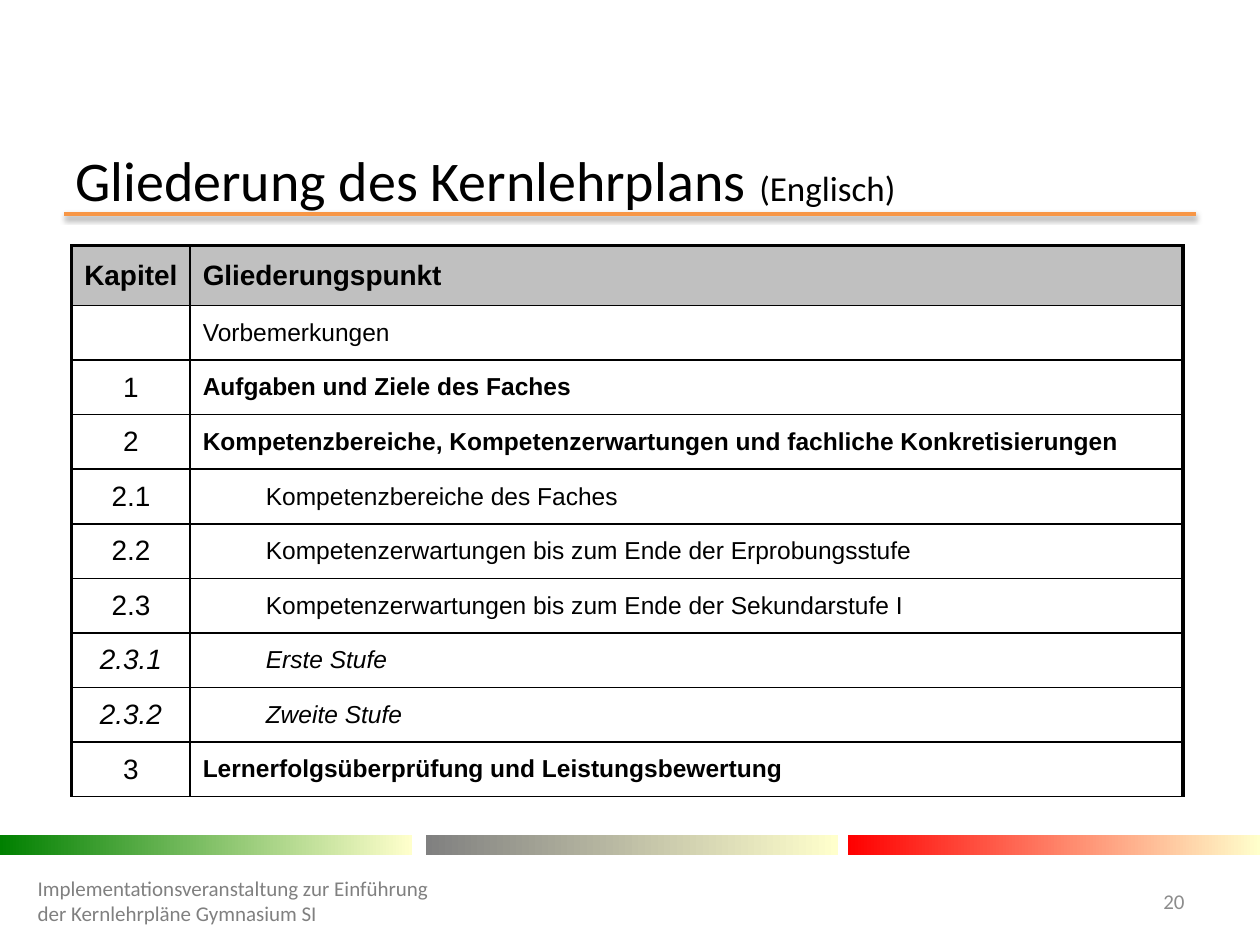
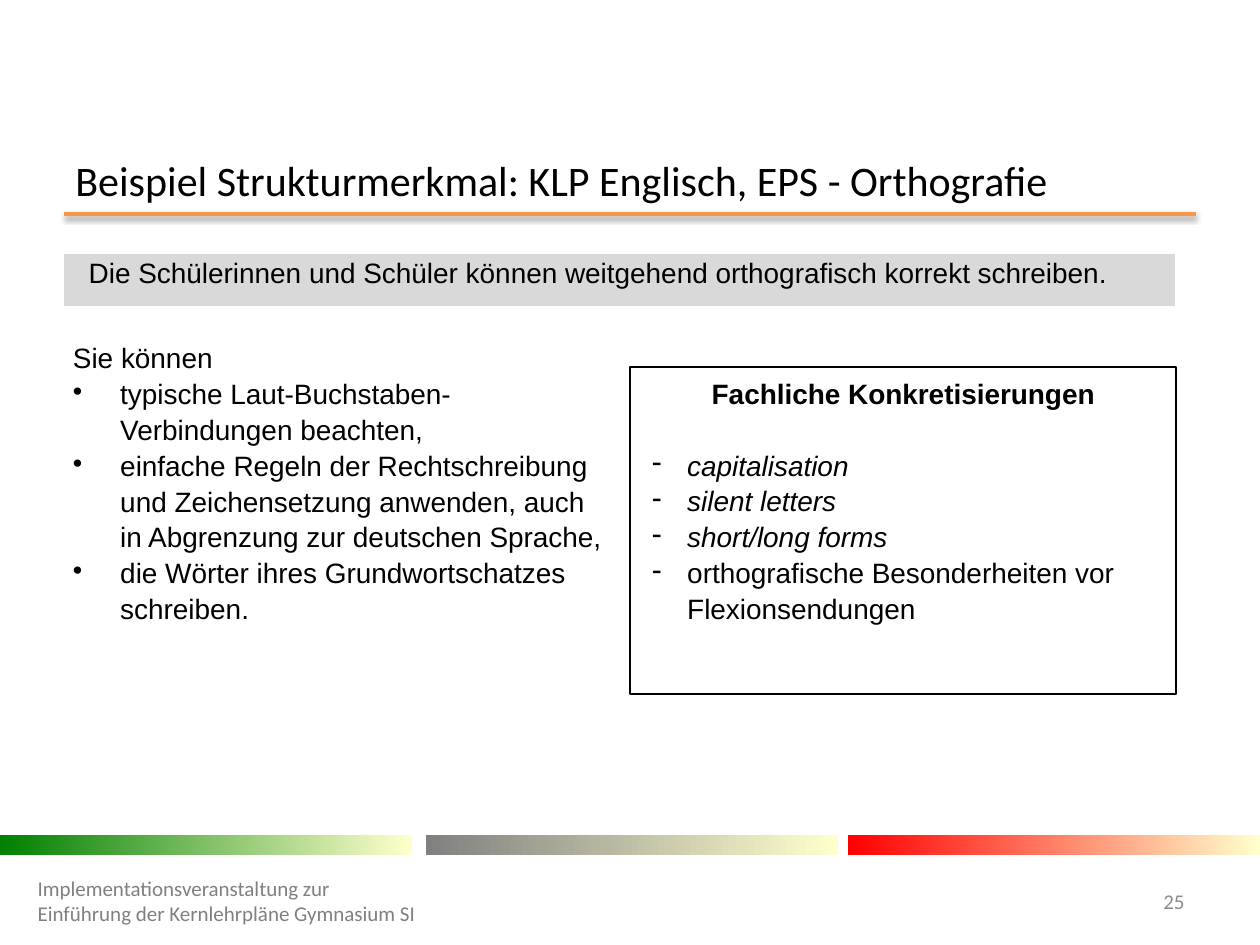
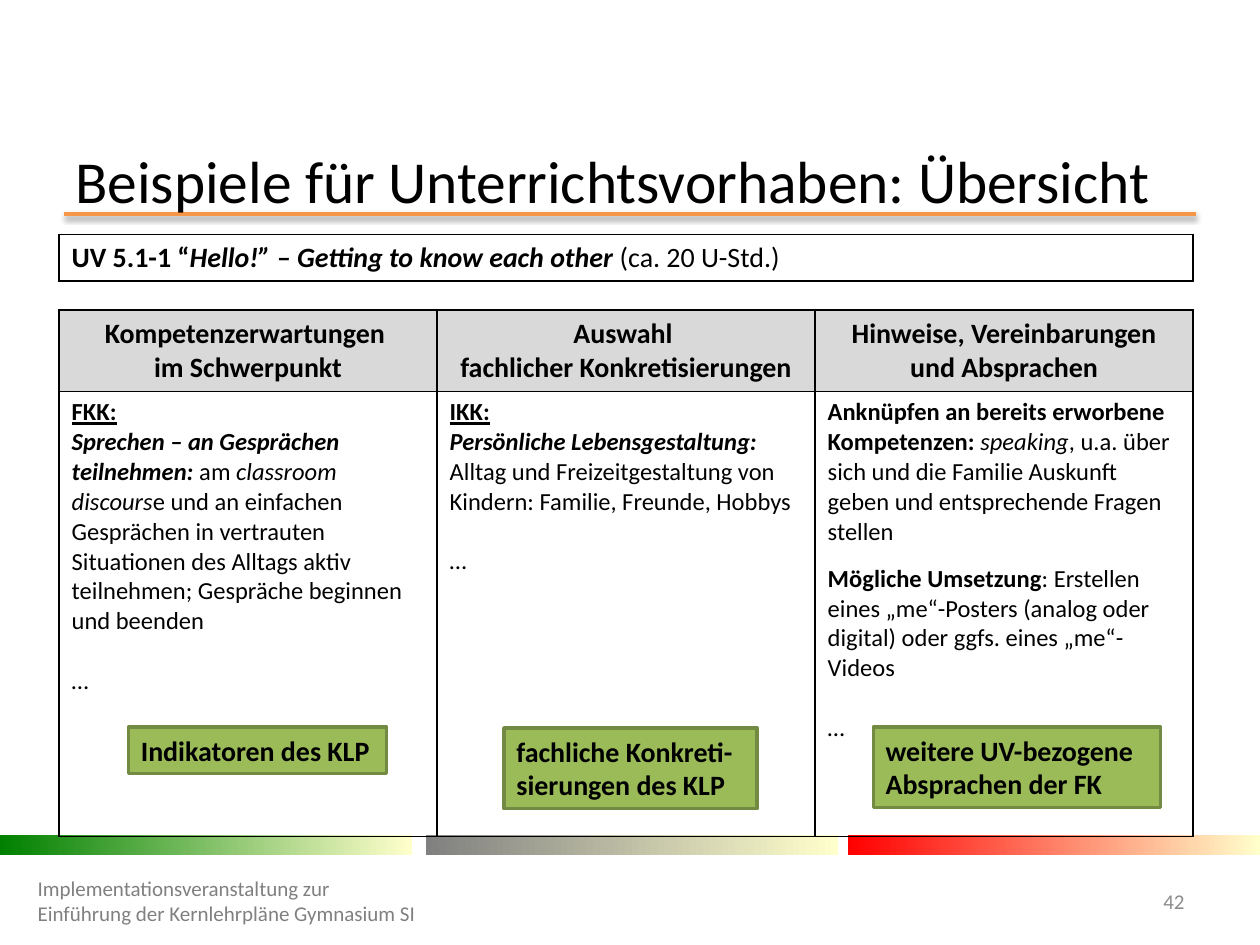
from dataclasses import dataclass

from lxml.etree import SubElement
from pptx import Presentation
from pptx.dml.color import RGBColor
from pptx.enum.shapes import MSO_CONNECTOR, MSO_SHAPE
from pptx.enum.text import MSO_ANCHOR, PP_ALIGN
from pptx.oxml.ns import qn
from pptx.util import Pt

BLACK = RGBColor(0x00, 0x00, 0x00)
ORANGE = RGBColor(0xF7, 0x96, 0x46)
GREEN = RGBColor(0x00, 0x80, 0x00)
GRAY = RGBColor(0x80, 0x80, 0x80)
RED = RGBColor(0xFF, 0x00, 0x00)
CREAM = RGBColor(0xFF, 0xFF, 0xCC)
NUMBER_GRAY = RGBColor(0x8C, 0x8C, 0x8C)
SILVER = RGBColor(0xC0, 0xC0, 0xC0)
LIGHT_GRAY = RGBColor(0xD9, 0xD9, 0xD9)
LABEL_GREEN = RGBColor(0x9B, 0xBB, 0x59)
LABEL_EDGE = RGBColor(0x73, 0x8A, 0x42)

BANDS = [(0, GREEN), (243.4, GRAY), (484.7, RED)]
FOOTER = "Implementationsveranstaltung zur Einführung der Kernlehrpläne Gymnasium SI"
THIN, THICK = 1, 2.25
BLANK_LINE = 17
CONCRETE_LINE = 20.4


@dataclass
class Run:
    text: str
    style: str = ""
    size: float = None


@dataclass
class Line:
    runs: list
    align: PP_ALIGN = PP_ALIGN.LEFT
    before: float = 0
    after: float = 0
    spacing: float = None
    margin: float = 0
    hanging: float = 0
    bullet: str = None


def line(text, style="", **options):
    return Line([Run(text, style)], **options)


def set_style(font, style):
    font.bold = "b" in style
    font.italic = "i" in style
    if "u" in style:
        font.underline = True


def add_text(paragraph, text):
    for index, part in enumerate(text.split("\n")):
        if index:
            paragraph.add_line_break()
        run = paragraph.add_run()
        run.text = part
    return run


def write(frame, lines, size, font="Calibri", color=BLACK):
    for index, content in enumerate(lines):
        paragraph = frame.add_paragraph() if index else frame.paragraphs[0]
        paragraph.alignment = content.align
        paragraph.space_before = Pt(content.before)
        paragraph.space_after = Pt(content.after)
        if content.spacing:
            paragraph.line_spacing = content.spacing
        properties = paragraph._p.get_or_add_pPr()
        properties.set("marL", str(Pt(content.margin)))
        properties.set("indent", str(Pt(-content.hanging)))
        if content.bullet:
            SubElement(properties, qn("a:buChar")).set("char", content.bullet)
        paragraph.font.name = font
        paragraph.font.size = Pt(size)
        paragraph.font.color.rgb = color
        if len(content.runs) == 1:
            set_style(paragraph.font, content.runs[0].style)
        for item in content.runs:
            run = add_text(paragraph, item.text)
            if len(content.runs) > 1:
                set_style(run.font, item.style)
            if item.size:
                run.font.size = Pt(item.size)


def add_textbox(slide, box, content, size, color=BLACK):
    frame = slide.shapes.add_textbox(*map(Pt, box)).text_frame
    frame.word_wrap = True
    frame.vertical_anchor = MSO_ANCHOR.MIDDLE
    write(frame, [content], size, color=color)


def add_rectangle(slide, box, fill=None, edge=None, width=1):
    shape = slide.shapes.add_shape(MSO_SHAPE.RECTANGLE, *map(Pt, box))
    shape.shadow.inherit = False
    if fill is None:
        shape.fill.background()
    else:
        shape.fill.solid()
        shape.fill.fore_color.rgb = fill
    if edge is None:
        shape.line.fill.background()
    else:
        shape.line.color.rgb = edge
        shape.line.width = Pt(width)
    return shape


def add_label(slide, box, text):
    frame = add_rectangle(slide, box, LABEL_GREEN, LABEL_EDGE, 2).text_frame
    frame.word_wrap = True
    frame.vertical_anchor = MSO_ANCHOR.TOP
    write(frame, [line(text, "b")], 16)


def add_band(slide, left, color):
    fill = add_rectangle(slide, (left, 477.4, 235.4, 11.4)).fill
    fill.gradient()
    fill.gradient_angle = 0
    for stop, stop_color in zip(fill.gradient_stops, (color, CREAM)):
        stop.color.rgb = stop_color


def add_title_rule(slide):
    rule = slide.shapes.add_connector(
        MSO_CONNECTOR.STRAIGHT, Pt(36.7), Pt(122.4), Pt(683.3), Pt(122.4))
    rule.line.color.rgb = ORANGE
    rule.line.width = Pt(2)
    effects = SubElement(rule._element.spPr, qn("a:effectLst"))
    shadow = SubElement(effects, qn("a:outerShdw"), blurRad=str(Pt(3.1)),
                        dist=str(Pt(1.6)), dir="5400000", rotWithShape="0")
    color = SubElement(shadow, qn("a:srgbClr"), val=str(BLACK))
    SubElement(color, qn("a:alpha"), val="38000")


def add_slide(presentation, title, number, footer_width=233.3):
    slide = presentation.slides.add_slide(presentation.slide_layouts[6])
    add_title_rule(slide)
    for left, color in BANDS:
        add_band(slide, left, color)
    runs, size = title
    add_textbox(slide, (36, 88.6, 648, 28), Line(runs), size)
    add_textbox(slide, (14.4, 500.4, footer_width, 28.8), line(FOOTER), 12, GRAY)
    add_textbox(slide, (638, 500.4, 46, 28.8),
                line(number, align=PP_ALIGN.RIGHT), 12, NUMBER_GRAY)
    return slide


def add_table(slide, left, top, columns, rows):
    frame = slide.shapes.add_table(len(rows), len(columns), Pt(left), Pt(top),
                                   Pt(sum(columns)), Pt(sum(rows)))
    table = frame.table
    table.first_row = table.horz_banding = False
    for column, width in zip(table.columns, columns):
        column.width = Pt(width)
    for row, height in zip(table.rows, rows):
        row.height = Pt(height)
    return table


def format_cell(cell, borders=(0, 0, 0, 0), fill=None, anchor=MSO_ANCHOR.TOP):
    properties = cell._tc.get_or_add_tcPr()
    for side, width in zip("LRTB", borders):
        border = SubElement(properties, qn(f"a:ln{side}"), w=str(Pt(width)))
        if width:
            paint = SubElement(border, qn("a:solidFill"))
            SubElement(paint, qn("a:srgbClr"), val=str(BLACK))
        else:
            SubElement(border, qn("a:noFill"))
    if fill is None:
        cell.fill.background()
    else:
        cell.fill.solid()
        cell.fill.fore_color.rgb = fill
    cell.vertical_anchor = anchor


def set_margins(cell, side, top=0):
    cell.margin_left = cell.margin_right = Pt(side)
    cell.margin_top, cell.margin_bottom = Pt(top), Pt(0)


def shrink_empty(cell):
    set_margins(cell, 0)
    cell.text_frame.paragraphs[0]._p.get_or_add_endParaRPr().set("sz", "600")


def build_outline(presentation):
    title = [Run("Gliederung des Kernlehrplans "), Run("(Englisch)", size=20)], 32
    slide = add_slide(presentation, title, "20", 238.3)
    entries = [
        ("Kapitel", "Gliederungspunkt", "b", "b"),
        ("", "Vorbemerkungen", "", ""),
        ("1", "Aufgaben und Ziele des Faches", "", "b"),
        ("2", "Kompetenzbereiche, Kompetenzerwartungen und fachliche Konkretisierungen", "", "b"),
        ("2.1", "Kompetenzbereiche des Faches", "", ""),
        ("2.2", "Kompetenzerwartungen bis zum Ende der Erprobungsstufe", "", ""),
        ("2.3", "Kompetenzerwartungen bis zum Ende der Sekundarstufe I", "", ""),
        ("2.3.1", "Erste Stufe", "i", "i"),
        ("2.3.2", "Zweite Stufe", "i", "i"),
        ("3", "Lernerfolgsüberprüfung und Leistungsbewertung", "", "b"),
    ]
    table = add_table(slide, 41, 140.4, [67.7, 567.3], [34.2] + [31.2] * 9)
    for index, (chapter, heading, chapter_style, heading_style) in enumerate(entries):
        is_header = index == 0
        top = THICK if is_header else THIN
        fill = SILVER if is_header else None
        chapter_cell, heading_cell = table.cell(index, 0), table.cell(index, 1)
        format_cell(chapter_cell, (THICK, THIN, top, THIN), fill, MSO_ANCHOR.MIDDLE)
        format_cell(heading_cell, (THIN, THICK, top, THIN), fill, MSO_ANCHOR.MIDDLE)
        if chapter:
            align = PP_ALIGN.LEFT if is_header else PP_ALIGN.CENTER
            write(chapter_cell.text_frame,
                  [line(chapter, chapter_style, align=align)], 16, "Arial")
        margin = 36 if "." in chapter else 0
        write(heading_cell.text_frame, [line(heading, heading_style, margin=margin)],
              16 if is_header else 14, "Arial")


def build_spelling(presentation):
    title = [Run("Beispiel Strukturmerkmal: KLP Englisch, EPS - Orthografie")], 24
    slide = add_slide(presentation, title, "25")
    table = add_table(slide, 36.7, 145.2, [324, 311], [29.6, 19, 264])
    table.cell(0, 0).merge(table.cell(0, 1))
    table.cell(1, 0).merge(table.cell(1, 1))
    for cell in table.iter_cells():
        format_cell(cell)
        set_margins(cell, 5)
    for column in range(2):
        shrink_empty(table.cell(1, column))
    statement, skills, details = table.cell(0, 0), table.cell(2, 0), table.cell(2, 1)
    statement.fill.solid()
    statement.fill.fore_color.rgb = LIGHT_GRAY
    write(statement.text_frame, [line(
        "Die Schülerinnen und Schüler können weitgehend orthografisch korrekt schreiben.",
        spacing=1.15, margin=9)], 16, "Arial")
    skill_texts = [
        "typische Laut-Buchstaben-Verbindungen beachten,",
        "einfache Regeln der Rechtschreibung und Zeichensetzung anwenden, auch \n"
        "in Abgrenzung zur deutschen Sprache,",
        "die Wörter ihres Grundwortschatzes schreiben.",
    ]
    write(skills.text_frame, [line("Sie können", spacing=1.15)] + [
        line(text, spacing=1.15, margin=27, hanging=27, bullet="•")
        for text in skill_texts], 16, "Arial")
    set_margins(details, 5, CONCRETE_LINE)
    detail_texts = [
        ("capitalisation", "i"),
        ("silent letters", "i"),
        ("short/long forms", "i"),
        ("orthografische Besonderheiten vor Flexionsendungen", ""),
    ]
    heading = line("Fachliche Konkretisierungen", "b", align=PP_ALIGN.CENTER,
                   spacing=1.15, after=CONCRETE_LINE)
    write(details.text_frame, [heading] + [
        line(text, style, spacing=1.15, margin=27, hanging=20, bullet="-")
        for text, style in detail_texts], 16, "Arial")
    add_rectangle(slide, (360, 209.5, 312, 187), edge=BLACK)


def build_units(presentation):
    title = [Run("Beispiele für Unterrichtsvorhaben: Übersicht")], 34
    slide = add_slide(presentation, title, "42")
    table = add_table(slide, 33.8, 134, [216] * 3, [26.7, 16.6, 46.4, 254.5])
    table.cell(0, 0).merge(table.cell(0, 2))
    table.cell(1, 0).merge(table.cell(1, 1))
    headers = [
        "Kompetenzerwartungen \nim Schwerpunkt",
        "Auswahl \nfachlicher Konkretisierungen",
        "Hinweise, Vereinbarungen und Absprachen",
    ]
    more = line("…", before=BLANK_LINE)
    bodies = [
        [line("FKK:", "bu"),
         Line([Run("Sprechen – an Gesprächen teilnehmen:", "bi"), Run(" am "),
               Run("classroom discours", "i"),
               Run("e und an einfachen Gesprächen in vertrauten Situationen des Alltags "
                   "aktiv teilnehmen; Gespräche beginnen und beenden")]),
         more],
        [line("IKK:", "bu"),
         Line([Run("Persönliche Lebensgestaltung: ", "bi"),
               Run("Alltag und Freizeitgestaltung von Kindern: Familie, Freunde, Hobbys")]),
         more],
        [Line([Run("Anknüpfen an bereits erworbene Kompetenzen: ", "b"),
               Run("speaking", "i"),
               Run(", u.a. über sich und die Familie Auskunft geben und "
                   "entsprechende Fragen stellen")]),
         Line([Run("Mögliche Umsetzung", "b"),
               Run(": Erstellen eines „me“-Posters (analog oder digital) "
                   "oder ggfs. eines „me“-Videos")], before=9.8),
         more],
    ]
    for column, (header, body) in enumerate(zip(headers, bodies)):
        unit, gap, header_cell, body_cell = (table.cell(row, column) for row in range(4))
        format_cell(unit, (THIN,) * 4, anchor=MSO_ANCHOR.MIDDLE)
        format_cell(gap, (0, 0, THIN, THIN))
        shrink_empty(gap)
        format_cell(header_cell, (THIN,) * 4, LIGHT_GRAY)
        format_cell(body_cell, (THIN,) * 4)
        write(header_cell.text_frame, [line(header, "b", align=PP_ALIGN.CENTER)], 16)
        write(body_cell.text_frame, body, 14)
    write(table.cell(0, 0).text_frame, [Line([
        Run("UV 5.1-1 “", "b"),
        Run("Hello!” – Getting to know each other ", "bi"),
        Run("(ca. 20 U-Std.)")])], 16)
    add_label(slide, (73.4, 415.5, 147.6, 26.6), "Indikatoren des KLP")
    add_label(slide, (288, 416, 144.7, 46), "fachliche Konkreti-sierungen des KLP")
    add_label(slide, (499, 415.5, 164.2, 46), "weitere UV-bezogene Absprachen der FK")


def main():
    presentation = Presentation()
    presentation.slide_width = Pt(720)
    presentation.slide_height = Pt(540)
    build_outline(presentation)
    build_spelling(presentation)
    build_units(presentation)
    presentation.save("out.pptx")


if __name__ == "__main__":
    main()
